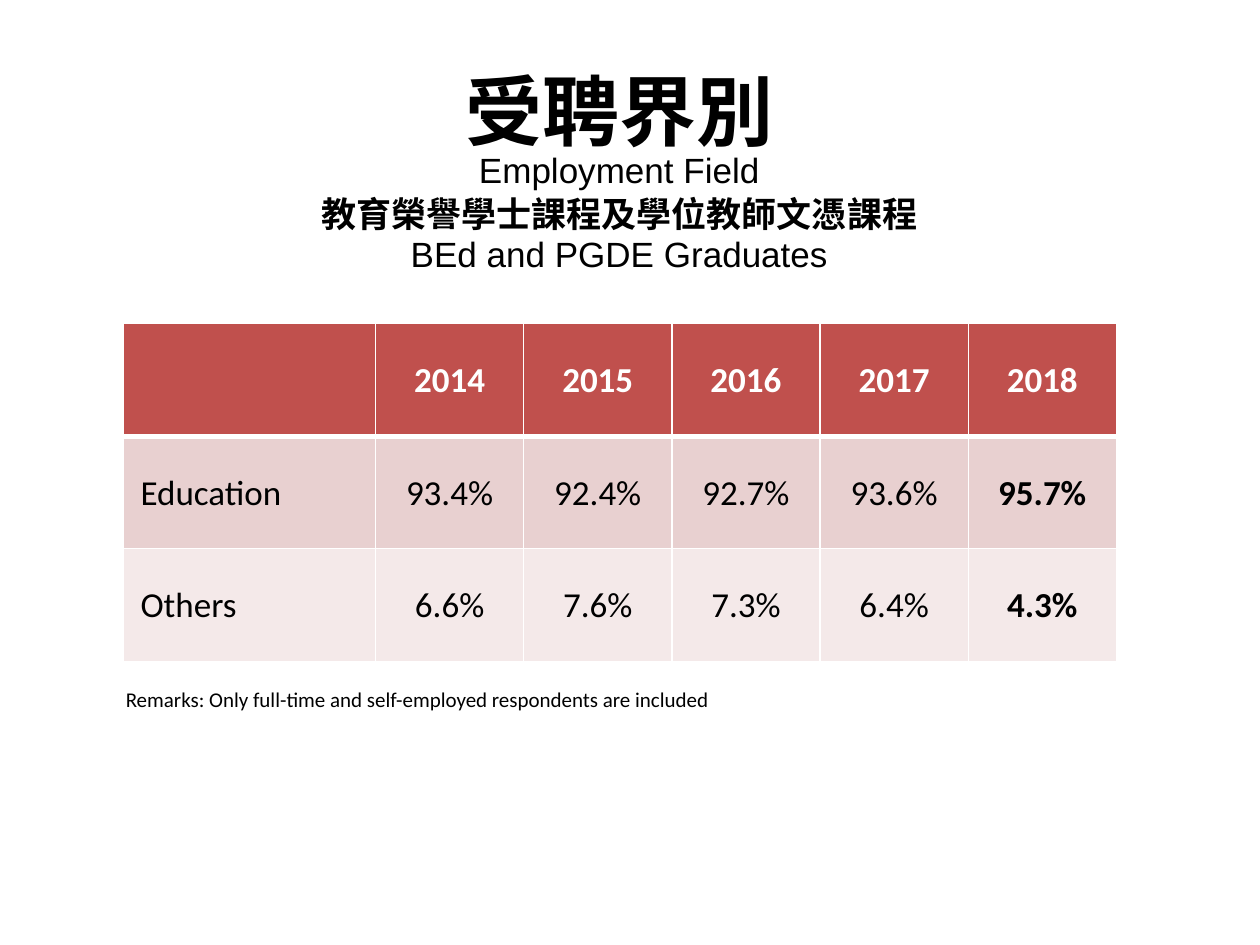
"""Build the employment field slide: a bilingual heading, a table by year and a remark."""
from dataclasses import dataclass

from lxml import etree
from pptx import Presentation
from pptx.dml.color import RGBColor
from pptx.enum import text
from pptx.oxml import ns
from pptx.util import Pt


@dataclass(frozen=True)
class Theme:
    body: str = "Calibri"
    heading: str = "Arial"
    chinese: str = "Noto Sans CJK TC"
    ink: str = "000000"
    white: str = "FFFFFF"
    fills: tuple = ("C0504D", "E8D0D0", "F4E9E9")
    title: int = 44
    regular: int = 20
    remark: int = 12


THEME = Theme()
HEADING = [
    ("受聘界別", THEME.chinese, THEME.title, True, 48),
    ("Employment Field", THEME.heading, THEME.regular, False, 19.7),
    ("教育榮譽學士課程及學位教師文憑課程", THEME.chinese, THEME.regular, True, 25.4),
    ("BEd and PGDE Graduates", THEME.heading, THEME.regular, False, 22.6),
]
FIELDS = [
    ("", "2014", "2015", "2016", "2017", "2018"),
    ("Education", "93.4%", "92.4%", "92.7%", "93.6%", "95.7%"),
    ("Others", "6.6%", "7.6%", "7.3%", "6.4%", "4.3%"),
]
REMARK = "Remarks: Only full-time and self-employed respondents are included"
HEADING_BOX = (25.9, 37.4, 655.9, 136.8)
REMARK_BOX = (64.8, 388.8, 357.1, 21.8)
TABLE_BOX = (70.6, 185, 567.4, 192.9)
LABEL_WIDTH = 144
LABEL_INDENT = 9.7


def assign(target, values):
    for name, value in values.items():
        setattr(target, name, value)


def write(paragraph, words, font, size, color=THEME.ink, bold=False):
    run = paragraph.add_run()
    run.text = words
    assign(run.font, {"name": font, "size": Pt(size), "bold": bold})
    run.font.color.rgb = RGBColor.from_string(color)
    if font == THEME.chinese:
        etree.SubElement(run.font._element, ns.qn("a:ea"), typeface=font)


def add_frame(slide, box):
    frame = slide.shapes.add_textbox(*map(Pt, box)).text_frame
    assign(frame, {"word_wrap": True, "vertical_anchor": text.MSO_ANCHOR.TOP})
    return frame


def add_heading(slide):
    frame = add_frame(slide, HEADING_BOX)
    for index, (words, font, size, bold, pitch) in enumerate(HEADING):
        line = frame.add_paragraph() if index else frame.paragraphs[0]
        assign(line, {"alignment": text.PP_ALIGN.CENTER, "line_spacing": Pt(pitch)})
        write(line, words, font, size, bold=bold)


def set_borders(cell, bottom):
    properties = cell._tc.get_or_add_tcPr()
    widths = {"a:lnL": 1, "a:lnR": 1, "a:lnT": 1, "a:lnB": bottom}
    for position, (side, width) in enumerate(widths.items()):
        border = etree.Element(ns.qn(side), w=str(Pt(width)))
        fill = etree.SubElement(border, ns.qn("a:solidFill"))
        etree.SubElement(fill, ns.qn("a:srgbClr"), val=THEME.white)
        properties.insert(position, border)


def add_fields(slide):
    years = len(FIELDS[0]) - 1
    table = slide.shapes.add_table(len(FIELDS), years + 1, *map(Pt, TABLE_BOX)).table
    for c, column in enumerate(table.columns):
        column.width = Pt((TABLE_BOX[2] - LABEL_WIDTH) / years if c else LABEL_WIDTH)
    for r, values in enumerate(FIELDS):
        table.rows[r].height = Pt(TABLE_BOX[3] / len(FIELDS))
        for c, value in enumerate(values):
            cell = table.cell(r, c)
            assign(cell, {
                "vertical_anchor": text.MSO_ANCHOR.MIDDLE,
                "margin_left": Pt(0.7 if c else LABEL_INDENT),
                "margin_right": Pt(0.7),
                "margin_top": Pt(0.7),
                "margin_bottom": 0,
            })
            cell.fill.solid()
            cell.fill.fore_color.rgb = RGBColor.from_string(THEME.fills[r])
            set_borders(cell, 1 if r else 3)
            line = cell.text_frame.paragraphs[0]
            line.alignment = text.PP_ALIGN.CENTER if c else text.PP_ALIGN.LEFT
            if value:
                color = THEME.ink if r else THEME.white
                write(line, value, THEME.body, THEME.regular, color, r == 0 or c == years)


def main():
    deck = Presentation()
    assign(deck, {"slide_width": Pt(720), "slide_height": Pt(540)})
    slide = deck.slides.add_slide(deck.slide_layouts[6])
    add_heading(slide)
    remark = add_frame(slide, REMARK_BOX)
    write(remark.paragraphs[0], REMARK, THEME.body, THEME.remark)
    add_fields(slide)
    deck.save("out.pptx")


if __name__ == "__main__":
    main()
